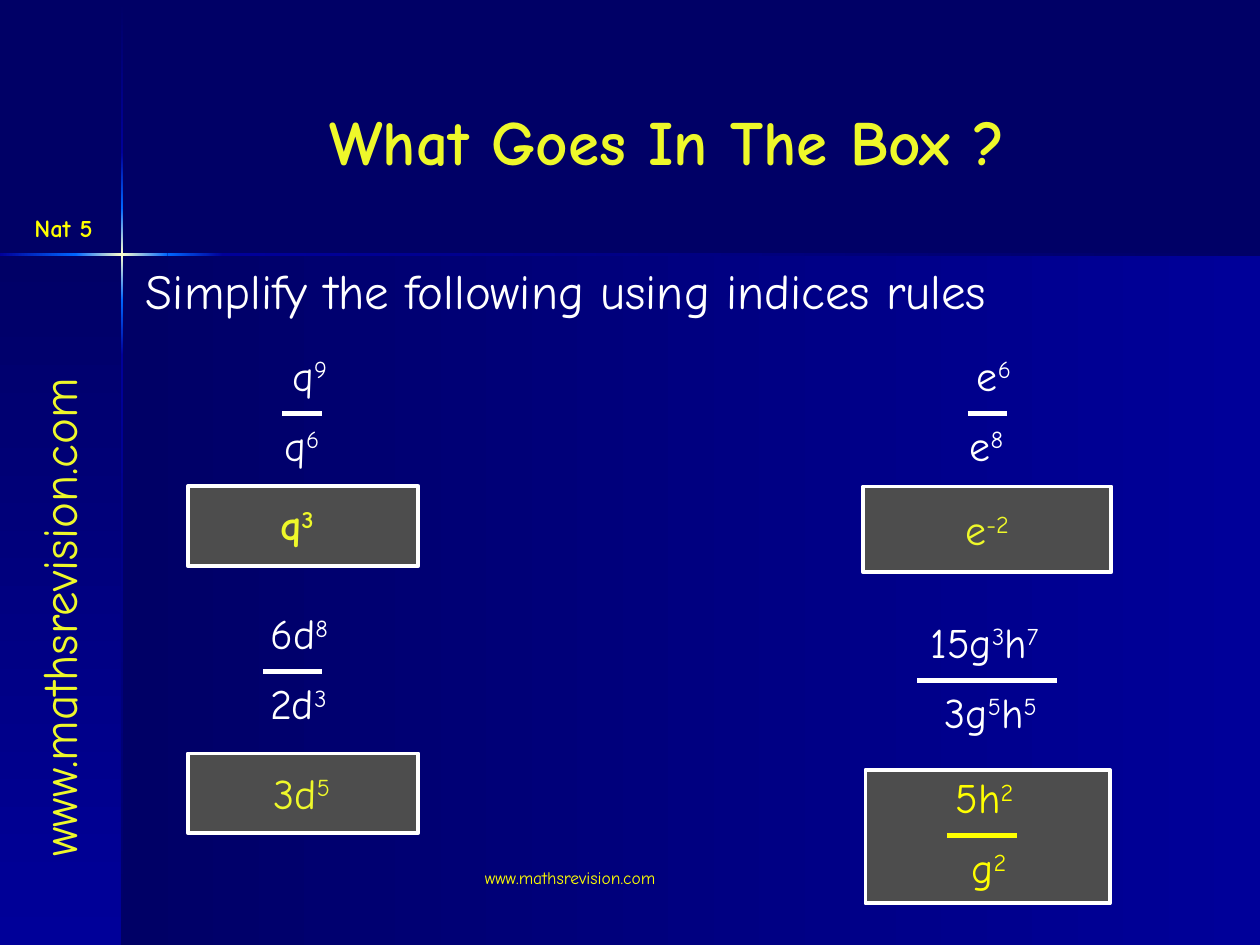
from dataclasses import dataclass

from lxml.etree import SubElement
from pptx import Presentation
from pptx.dml.color import RGBColor
from pptx.enum.shapes import MSO_CONNECTOR, MSO_SHAPE
from pptx.enum.text import MSO_ANCHOR as Anchor, PP_ALIGN as Align
from pptx.oxml.ns import qn
from pptx.util import Pt

FONT = "Comic Neue"
SITE = "www.mathsrevision.com"
NAVY = RGBColor(0x00, 0x00, 0x66)
BLUE = RGBColor(0x00, 0x00, 0x99)
BRIGHT = RGBColor(0x00, 0x66, 0xFF)
CREAM = RGBColor(0xFF, 0xFF, 0xCC)
LEMON = RGBColor(0xEE, 0xF8, 0x2A)
YELLOW = RGBColor(0xFF, 0xFF, 0x00)
WHITE = RGBColor(0xFF, 0xFF, 0xFF)
GREY = RGBColor(0x4D, 0x4D, 0x4D)

TERM_HEIGHT = 36.5   # height of one line of algebra
NUMERATOR_RISE = 40  # from the top of a numerator to its bar
DOWN, ACROSS = 90, 0


@dataclass
class Panel:
    left: float
    top: float
    width: float
    height: float
    angle: int
    colours: tuple[RGBColor, ...]


@dataclass
class Frame:
    left: float
    top: float
    width: float
    height: float


@dataclass
class Term:
    """Algebra in which every second part, split at |, is a superscript."""
    text: str
    centre: float
    width: float


@dataclass
class Fraction:
    top: Term
    bottom: Term
    bar_left: float
    bar_right: float
    bar_y: float
    colour: RGBColor = WHITE


@dataclass
class Answer:
    term: Term
    top: float
    bold: bool = False


PANELS = [
    Panel(70, 145.5, 650, 394.5, ACROSS, (NAVY, BLUE)),
    Panel(0, 145.5, 70, 394.5, DOWN, (NAVY, BLUE)),
    # Vertical glowing line
    Panel(69, 0.5, 1.5, 86.5, DOWN, (NAVY, BLUE)),
    Panel(69, 203, 1.5, 337, DOWN, (BLUE, NAVY)),
    Panel(69, 171.5, 1.5, 31.5, DOWN, (BRIGHT, BLUE)),
    Panel(69, 87, 1.5, 32, DOWN, (BLUE, BRIGHT)),
    Panel(69, 119, 1.5, 52.5, DOWN, (BRIGHT, CREAM, BRIGHT)),
    # Horizontal glowing line
    Panel(127.5, 144.7, 592.5, 1.5, ACROSS, (BLUE, NAVY)),
    Panel(0, 144.7, 43.5, 1.5, ACROSS, (BLUE, BRIGHT)),
    Panel(95.7, 144.7, 31.8, 1.5, ACROSS, (BRIGHT, BLUE)),
    Panel(43.2, 144.7, 52.5, 1.5, ACROSS, (BRIGHT, CREAM, BRIGHT)),
]

ANSWER_FRAMES = [
    Frame(107.3, 278, 131.8, 45.4),
    Frame(107.3, 430.6, 131.8, 45.4),
    Frame(493.2, 278, 141.8, 49),
    Frame(494.6, 440, 139.7, 76.3),
]

ANSWERS = [
    Answer(Term("q|3", 169.6, 118.8), 281.5, bold=True),
    Answer(Term("3d|5", 172.5, 113), 434.9),
    Answer(Term("e|-2", 564.1, 113), 284.4),
]

FRACTIONS = [
    Fraction(Term("q|9", 176.9, 57), Term("q|6", 172.4, 37), 161.3, 184.3, 236.2),
    Fraction(Term("e|6", 568, 57), Term("e|8", 563.6, 37), 553, 575.3, 236.2),
    Fraction(Term("6d|8", 171, 68), Term("2d|3", 170.5, 53), 150.5, 184.3, 383.8),
    Fraction(Term("15g|3|h|7", 562.5, 102), Term("3g|5|h|5", 566, 76),
             524.2, 604.1, 388.8),
    Fraction(Term("5h|2", 562.5, 102), Term("g|2", 565, 37),
             541.4, 581, 477.4, YELLOW),
]


def add_rect(page, area: Panel | Frame):
    rect = page.shapes.add_shape(MSO_SHAPE.RECTANGLE, Pt(area.left), Pt(area.top),
                                 Pt(area.width), Pt(area.height))
    rect.shadow.inherit = False
    return rect


def add_panel(page, panel: Panel) -> None:
    rect = add_rect(page, panel)
    rect.line.fill.background()
    rect.fill.gradient()
    gradient = rect._element.spPr.find(qn("a:gradFill"))
    for child in list(gradient):
        gradient.remove(child)
    stops = SubElement(gradient, qn("a:gsLst"))
    for index, colour in enumerate(panel.colours):
        position = 100000 * index // (len(panel.colours) - 1)
        stop = SubElement(stops, qn("a:gs"), pos=str(position))
        SubElement(stop, qn("a:srgbClr"), val=str(colour))
    SubElement(gradient, qn("a:lin"), ang=str(panel.angle * 60000), scaled="0")


def add_frame(page, frame: Frame) -> None:
    rect = add_rect(page, frame)
    rect.fill.solid()
    rect.fill.fore_color.rgb = GREY
    rect.line.color.rgb = WHITE
    rect.line.width = Pt(2.25)


def add_text(page, text: str, left: float, top: float, width: float, height: float, *,
             size: float, colour: RGBColor, bold: bool = False, align=Align.LEFT,
             anchor=Anchor.TOP, wrap: bool = True, rotation: float = 0) -> None:
    box = page.shapes.add_textbox(Pt(left), Pt(top), Pt(width), Pt(height))
    box.rotation = rotation
    box.text_frame.word_wrap = wrap
    box.text_frame.vertical_anchor = anchor
    para = box.text_frame.paragraphs[0]
    para.alignment = align
    for index, part in enumerate(text.split("|")):
        span = para.add_run()
        span.text = part
        span.font.name = FONT
        span.font.size = Pt(size)
        span.font.bold = bold
        span.font.color.rgb = colour
        if index % 2:
            span.font._element.set("baseline", "30000")


def add_term(page, term: Term, top: float, colour: RGBColor, bold: bool = False) -> None:
    add_text(page, term.text, term.centre - term.width / 2, top, term.width, TERM_HEIGHT,
             size=24, colour=colour, bold=bold, align=Align.CENTER, wrap=False)


def add_fraction(page, fraction: Fraction) -> None:
    add_term(page, fraction.top, fraction.bar_y - NUMERATOR_RISE, fraction.colour)
    add_term(page, fraction.bottom, fraction.bar_y, fraction.colour)
    bar = page.shapes.add_connector(MSO_CONNECTOR.STRAIGHT,
                                    Pt(fraction.bar_left), Pt(fraction.bar_y),
                                    Pt(fraction.bar_right), Pt(fraction.bar_y))
    bar.line.color.rgb = fraction.colour
    bar.line.width = Pt(3)
    SubElement(bar._element.spPr, qn("a:effectLst"))


def main() -> None:
    deck = Presentation()
    deck.slide_width, deck.slide_height = Pt(720), Pt(540)
    page = deck.slides.add_slide(deck.slide_layouts[6])

    # Background
    page.background.fill.solid()
    page.background.fill.fore_color.rgb = NAVY
    for panel in PANELS:
        add_panel(page, panel)

    # Web address, title, level and instruction
    add_text(page, SITE, -125.3, 317.5, 316.8, 41, size=28, colour=LEMON, rotation=270)
    add_text(page, SITE, 270, 491.8, 228, 36, size=10, colour=YELLOW)
    add_text(page, "What Goes In The Box ?", 84.2, 23.8, 594, 113, size=36, colour=LEMON,
             bold=True, align=Align.CENTER, anchor=Anchor.MIDDLE)
    add_text(page, "Nat 5", 8.6, 118, 55.4, 24.5, size=14, colour=YELLOW, bold=True,
             align=Align.CENTER, wrap=False)
    add_text(page, "Simplify the following using indices rules", 76.3, 145.5, 643.7, 41,
             size=28, colour=WHITE)

    # Answers and questions
    for frame in ANSWER_FRAMES:
        add_frame(page, frame)
    for answer in ANSWERS:
        add_term(page, answer.term, answer.top, LEMON, answer.bold)
    for fraction in FRACTIONS:
        add_fraction(page, fraction)

    deck.save("out.pptx")


if __name__ == "__main__":
    main()
